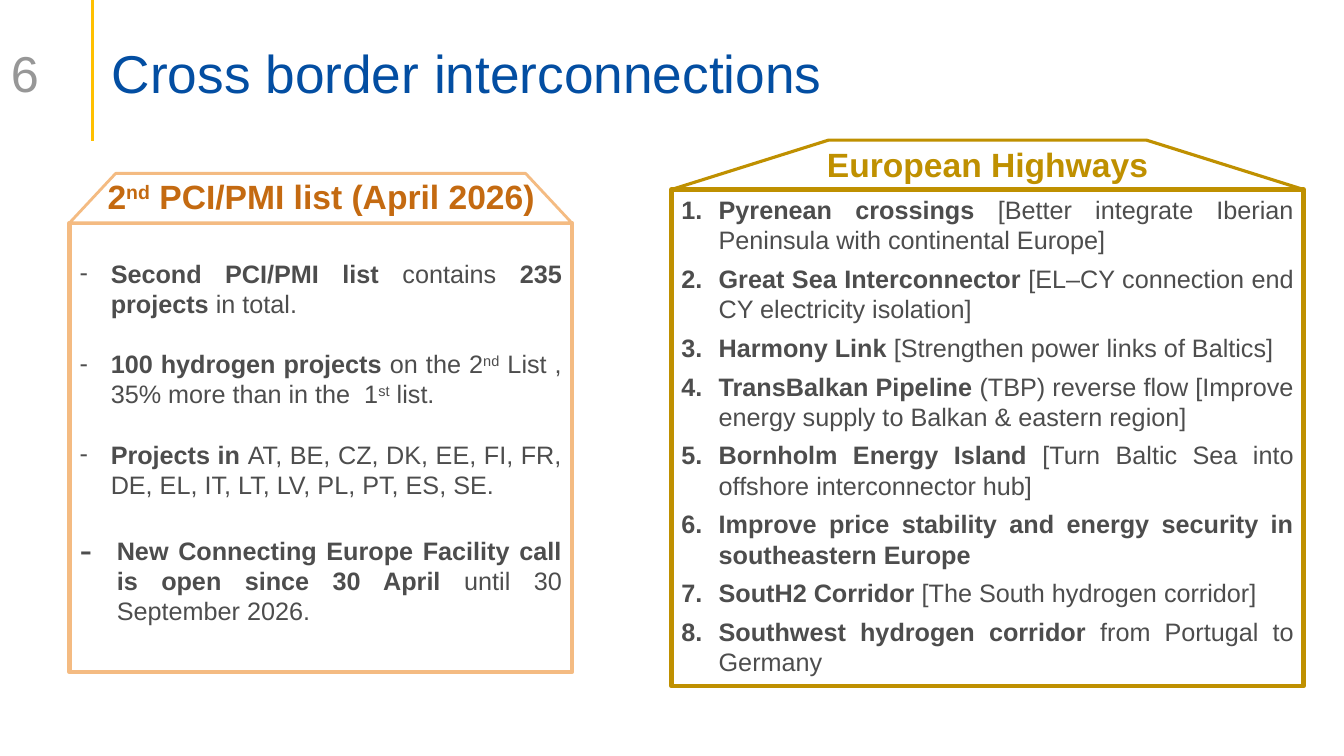
"""Build the slide on cross border interconnections."""
from lxml.etree import SubElement
from pptx import Presentation
from pptx.dml.color import RGBColor
from pptx.enum.shapes import MSO_CONNECTOR, MSO_SHAPE
from pptx.enum.text import MSO_ANCHOR, PP_ALIGN
from pptx.oxml.ns import qn
from pptx.util import Inches, Pt

COLORS = {
    "title": "034EA2", "number": "979797", "rule": "FFC000", "body": "4D4D4D",
    "white": "FFFFFF", "peach": "F4BB82", "orange": "C46A11", "gold": "BF9000",
}
BOLD, PLAIN, SUPER, BOLD_SUPER = (True, 0), (False, 0), (False, 30000), (True, 30000)
DASH = {"indent": 0.31, "before": 21.5, "after": 0, "bullet": [("buFont", "typeface", "Arial"), ("buChar", "char", "-")]}
BIG_DASH = DASH | {"indent": 0.37, "before": 25.5, "bullet": [("buSzPct", "val", "150000"), *DASH["bullet"]]}
NUMBER = {"indent": 0.37, "before": 0, "after": 6, "bullet": [("buFont", "typeface", "Arial"), ("buAutoNum", "type", "arabicPeriod")]}
BOTTOM = {"vertical_anchor": MSO_ANCHOR.BOTTOM, "margin_bottom": 0}

PROJECTS = [
    (DASH, [("Second PCI/PMI list ", BOLD), ("contains ", PLAIN), ("235 projects", BOLD), (" in total.", PLAIN)]),
    (DASH, [("100 hydrogen projects ", BOLD), ("on the 2", PLAIN), ("nd", SUPER),
            (" List , 35% more than in the  1", PLAIN), ("st", SUPER), (" list.", PLAIN)]),
    (DASH, [("Projects in ", BOLD), ("AT, BE, CZ, DK, EE, FI, FR, DE, EL, IT, LT, LV, PL, PT, ES, SE.", PLAIN)]),
    (BIG_DASH, [("New Connecting Europe Facility call is open since 30 April ", BOLD), ("until 30 September 2026.", PLAIN)]),
]
HIGHWAYS = [
    ("Pyrenean crossings ", "[Better integrate Iberian Peninsula with continental Europe]"),
    ("Great Sea Interconnector ", "[EL–CY connection end CY electricity isolation]"),
    ("Harmony Link ", "[Strengthen power links of Baltics]"),
    ("TransBalkan Pipeline ", "(TBP) reverse flow [Improve energy supply to Balkan & eastern region]"),
    ("Bornholm Energy Island ", "[Turn Baltic Sea into offshore interconnector hub]"),
    ("Improve price stability and energy security in southeastern Europe", ""),
    ("SoutH2 Corridor ", "[The South hydrogen corridor]"),
    ("Southwest hydrogen corridor ", "from Portugal to Germany"),
]
HOUSES = [
    {"box": (0.69, 2.21, 4.98, 4.46), "line": "peach", "box_fill": None, "roof_fill": "white", "roof_width": 2,
     "slope": 0.933, "inset": 0.35, "items": PROJECTS, "heading_at": (0.79, 1.66, 4.79, 0.49), "heading_color": "orange",
     "heading": [("2", BOLD), ("nd", BOLD_SUPER), (" PCI/PMI list (April 2026)", BOLD)]},
    {"box": (6.66, 1.88, 6.27, 4.93), "line": "gold", "box_fill": "white", "roof_fill": None, "roof_width": 2.25,
     "slope": 3.179, "inset": 0.05, "heading_at": (7.81, 1.46, 3.97, 0.37), "heading_color": "gold",
     "items": [(NUMBER, [(name, BOLD)] + ([(detail, PLAIN)] if detail else [])) for name, detail in HIGHWAYS],
     "heading": [("European Highways", BOLD)]},
]
ROOF_HEIGHT = 0.49


def set_values(target, values):
    for name, value in values.items():
        setattr(target, name, value)


def rgb(name):
    return RGBColor.from_string(COLORS[name])


def add_runs(paragraph, runs, size, color):
    for text, (bold, baseline) in runs:
        run = paragraph.add_run()
        run.text = text
        set_values(run.font, {"size": Pt(size), "name": "Arial", "bold": bold})
        run.font.color.rgb = rgb(color)
        if baseline:
            run.font._element.set("baseline", str(baseline))


def add_label(slide, place, runs, size, color, frame_format, paragraph_format):
    frame = slide.shapes.add_textbox(*map(Inches, place)).text_frame
    set_values(frame, {"word_wrap": True} | frame_format)
    set_values(frame.paragraphs[0], paragraph_format)
    add_runs(frame.paragraphs[0], runs, size, color)


def add_outline(slide, kind, place, fill, line, width):
    shape = slide.shapes.add_shape(kind, *map(Inches, place))
    shape.shadow.inherit = False
    if fill:
        shape.fill.solid()
        shape.fill.fore_color.rgb = rgb(fill)
    else:
        shape.fill.background()
    shape.line.color.rgb = rgb(line)
    shape.line.width = Pt(width)
    return shape


def add_list(frame, items, inset):
    set_values(frame, {"word_wrap": True, "vertical_anchor": MSO_ANCHOR.TOP, "margin_top": Inches(inset)})
    for index, (style, runs) in enumerate(items):
        paragraph = frame.add_paragraph() if index else frame.paragraphs[0]
        properties = paragraph._p.get_or_add_pPr()
        properties.set("marL", str(Inches(style["indent"])))
        properties.set("indent", str(-Inches(style["indent"])))
        for tag, attribute, value in style["bullet"]:
            SubElement(properties, qn(f"a:{tag}")).set(attribute, value)
        set_values(paragraph, {"alignment": PP_ALIGN.JUSTIFY, "space_after": Pt(style["after"]),
                               "space_before": Pt(style["before"] if index else 0)})
        add_runs(paragraph, runs, 18, "body")


def add_house(slide, house):
    left, top, width, height = house["box"]
    box = add_outline(slide, MSO_SHAPE.RECTANGLE, house["box"], house["box_fill"], house["line"], 3)
    add_list(box.text_frame, house["items"], house["inset"])
    roof = add_outline(slide, MSO_SHAPE.TRAPEZOID, (left, top - ROOF_HEIGHT, width, ROOF_HEIGHT),
                       house["roof_fill"], house["line"], house["roof_width"])
    roof.adjustments[0] = house["slope"]
    add_label(slide, house["heading_at"], house["heading"], 24, house["heading_color"],
              BOTTOM, {"alignment": PP_ALIGN.CENTER, "line_spacing": 0.9})


def main():
    presentation = Presentation()
    set_values(presentation, {"slide_width": Inches(13.33), "slide_height": Inches(7.5)})
    slide = presentation.slides.add_slide(presentation.slide_layouts[6])
    rule = slide.shapes.add_connector(MSO_CONNECTOR.STRAIGHT, *map(Inches, (0.92, 0, 0.92, 1.4)))
    rule.line.color.rgb = rgb("rule")
    rule.line.width = Pt(2.25)
    SubElement(rule._element.spPr, qn("a:effectLst"))
    add_label(slide, (1.01, 0.4, 11.5, 0.64), [("Cross border interconnections", PLAIN)], 38, "title",
              BOTTOM, {"line_spacing": 0.9})
    add_label(slide, (0.01, 0.52, 0.89, 0.4), [("6", PLAIN)], 36, "number",
              {"vertical_anchor": MSO_ANCHOR.MIDDLE}, {})
    for house in HOUSES:
        add_house(slide, house)
    presentation.save("out.pptx")


if __name__ == "__main__":
    main()
